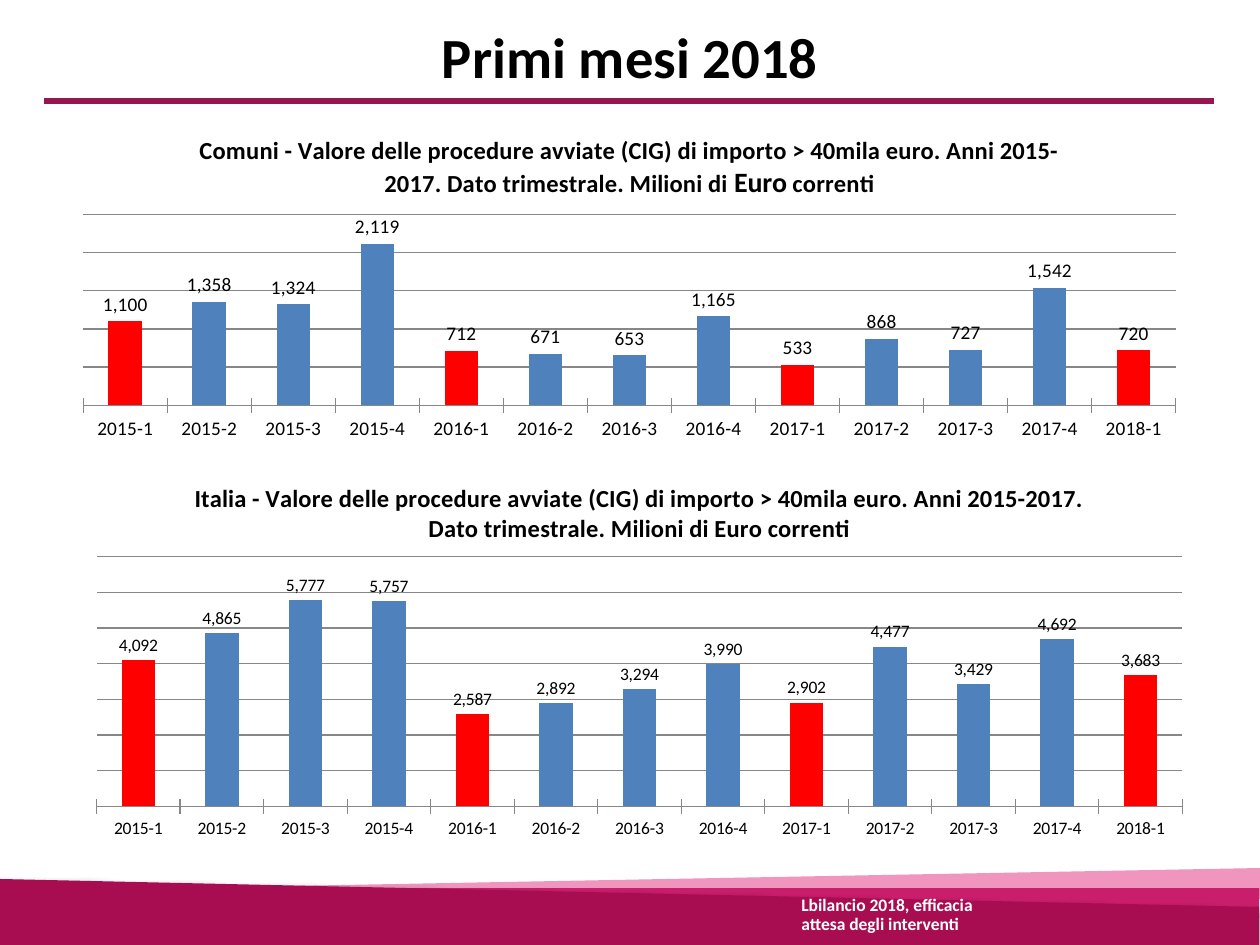
from dataclasses import dataclass

from lxml.etree import SubElement
from pptx import Presentation
from pptx.chart.data import CategoryChartData
from pptx.dml.color import RGBColor
from pptx.enum.chart import XL_CHART_TYPE, XL_LABEL_POSITION, XL_TICK_LABEL_POSITION, XL_TICK_MARK
from pptx.enum.shapes import MSO_CONNECTOR
from pptx.enum.text import MSO_ANCHOR, PP_ALIGN
from pptx.oxml import parse_xml
from pptx.oxml.ns import nsdecls, qn
from pptx.util import Pt

SCALE = 914400 / 126


def px(length):
    return round(length * SCALE)


@dataclass(frozen=True)
class Theme:
    font: str = "Calibri"
    text: str = "000000"
    light: str = "FFFFFF"
    rule: str = "961650"
    pink: str = "E969A3"
    crimson: str = "C81E6B"
    burgundy: str = "A90D51"
    bar: str = "4F81BD"
    first_quarter: str = "FF0000"
    grid: str = "878787"
    title_size: float = 32.4
    footer_size: int = 10
    chart_title_size: int = 14
    emphasis_size: int = 16


def apply(target, values):
    for name, value in values.items():
        setattr(target, name, value)


class SlideBuilder:
    def __init__(self, presentation, theme):
        self.theme = theme
        self.slide = presentation.slides.add_slide(presentation.slide_layouts[5])

    def style(self, font, size, color, bold=False):
        apply(font, {"name": self.theme.font, "size": Pt(size), "bold": bold})
        font.color.rgb = RGBColor.from_string(color)

    def title(self, text, box):
        shape = self.slide.shapes.title
        apply(shape, dict(zip(("left", "top", "width", "height"), map(px, box))))
        shape.text_frame.text = text
        shape.text_frame.vertical_anchor = MSO_ANCHOR.MIDDLE
        paragraph = shape.text_frame.paragraphs[0]
        paragraph.alignment = PP_ALIGN.CENTER
        self.style(paragraph.runs[0].font, self.theme.title_size, self.theme.text, True)

    def footer(self, text, box):
        frame = self.slide.shapes.add_textbox(*map(px, box)).text_frame
        frame.word_wrap = True
        frame.text = text
        paragraph = frame.paragraphs[0]
        paragraph.line_spacing = 0.9
        self.style(paragraph.runs[0].font, self.theme.footer_size, self.theme.light, True)

    def rule(self, left, right, top):
        line = self.slide.shapes.add_connector(
            MSO_CONNECTOR.STRAIGHT, px(left), px(top), px(right), px(top))
        line.line.width = Pt(3)
        line.line.color.rgb = RGBColor.from_string(self.theme.rule)
        SubElement(line._element.spPr, qn("a:effectLst"))

    def band(self, points, color, opacity=100, shadow=False):
        builder = self.slide.shapes.build_freeform(*points[0], scale=SCALE)
        builder.add_line_segments(points[1:], close=True)
        shape = builder.convert_to_shape()
        shape.shadow.inherit = False
        shape.line.fill.background()
        shape.fill.solid()
        shape.fill.fore_color.rgb = RGBColor.from_string(color)
        properties = shape._element.spPr
        if opacity < 100:
            fill_color = properties.find(qn("a:solidFill"))[0]
            SubElement(fill_color, qn("a:alpha"), val=str(opacity * 1000))
        if shadow:
            properties.find(qn("a:effectLst")).append(parse_xml(
                f'<a:outerShdw {nsdecls("a")} blurRad="{Pt(3.1)}" dist="{Pt(1.6)}" dir="5400000">'
                '<a:srgbClr val="000000"><a:alpha val="38000"/></a:srgbClr></a:outerShdw>'))

    def chart(self, box, title_parts, categories, values, size, maximum, step, plot):
        data = CategoryChartData(number_format="#,##0")
        data.categories = categories
        data.add_series("Series 1", values)
        chart = self.slide.shapes.add_chart(
            XL_CHART_TYPE.COLUMN_CLUSTERED, *map(px, box), data).chart
        apply(chart, {"has_legend": False, "has_title": True})
        self.style(chart.font, size, self.theme.text)
        paragraph = chart.chart_title.text_frame.paragraphs[0]
        for text, text_size in title_parts:
            run = paragraph.add_run()
            run.text = text
            self.style(run.font, text_size, self.theme.text, True)
        chart.chart_title.include_in_layout = False
        self.axes(chart, maximum, step)
        self.columns(chart.plots[0], size)
        self.place_plot(chart, plot)

    def axes(self, chart, maximum, step):
        gray = RGBColor.from_string(self.theme.grid)
        apply(chart.value_axis, {
            "minimum_scale": 0, "maximum_scale": maximum, "major_unit": step,
            "has_major_gridlines": True, "visible": False})
        apply(chart.category_axis, {
            "major_tick_mark": XL_TICK_MARK.CROSS, "minor_tick_mark": XL_TICK_MARK.NONE,
            "tick_label_position": XL_TICK_LABEL_POSITION.LOW})
        for line in (chart.value_axis.major_gridlines.format.line, chart.category_axis.format.line):
            line.width = Pt(0.75)
            line.color.rgb = gray

    def columns(self, plot, size):
        apply(plot, {"gap_width": 150, "vary_by_categories": False, "has_data_labels": True})
        apply(plot.data_labels, {
            "show_value": True, "position": XL_LABEL_POSITION.OUTSIDE_END,
            "number_format": "#,##0", "number_format_is_linked": False})
        self.style(plot.data_labels.font, size, self.theme.text)
        series = plot.series[0]
        series.invert_if_negative = False
        series.format.fill.solid()
        series.format.fill.fore_color.rgb = RGBColor.from_string(self.theme.bar)
        for index in range(0, len(series.values), 4):
            fill = series.points[index].format.fill
            fill.solid()
            fill.fore_color.rgb = RGBColor.from_string(self.theme.first_quarter)

    def place_plot(self, chart, plot):
        area = chart._chartSpace.chart.plotArea
        for layout in area.findall(qn("c:layout")):
            area.remove(layout)
        settings = {"layoutTarget": "inner", "xMode": "edge", "yMode": "edge"}
        settings.update(zip("xywh", plot))
        children = "".join(f'<c:{name} val="{value}"/>' for name, value in settings.items())
        area.insert(0, parse_xml(
            f'<c:layout {nsdecls("c")}><c:manualLayout>{children}</c:manualLayout></c:layout>'))


def main():
    theme = Theme()
    presentation = Presentation()
    apply(presentation, {"slide_width": px(1260), "slide_height": px(945)})
    builder = SlideBuilder(presentation, theme)

    builder.band([(1260, 868), (1260, 899), (233, 887)], theme.pink, opacity=70)
    builder.band([(5, 888), (1259, 888), (1259, 918), (15, 888)], theme.crimson)
    builder.band([(0, 879), (0, 945), (1259, 945), (1259, 907)], theme.burgundy, shadow=True)
    builder.rule(44, 1214, 101)
    builder.title("Primi mesi 2018", (0, 16, 1260, 80))
    builder.footer("Lbilancio 2018, efficacia attesa degli interventi", (789, 890, 198, 50))

    quarters = [f"{2015 + index // 4}-{index % 4 + 1}" for index in range(13)]
    subject = ("Valore delle procedure avviate (CIG) di importo > 40mila euro. "
               "Anni 2015-2017. Dato trimestrale. Milioni di ")
    size = theme.chart_title_size
    builder.chart(
        (64, 116, 1131, 338),
        [("Comuni - " + subject, size), ("Euro", theme.emphasis_size), (" correnti", size)],
        quarters,
        [1100, 1358, 1324, 2119, 712, 671, 653, 1165, 533, 868, 727, 1542, 720],
        size=11, maximum=2500, step=500, plot=(0.017, 0.292, 0.966, 0.564))
    builder.chart(
        (74, 462, 1131, 384),
        [("Italia - " + subject + "Euro correnti", size)],
        quarters,
        [4092, 4865, 5777, 5757, 2587, 2892, 3294, 3990, 2902, 4477, 3429, 4692, 3683],
        size=10, maximum=7000, step=1000, plot=(0.02, 0.247, 0.96, 0.65))

    presentation.save("out.pptx")


if __name__ == "__main__":
    main()
